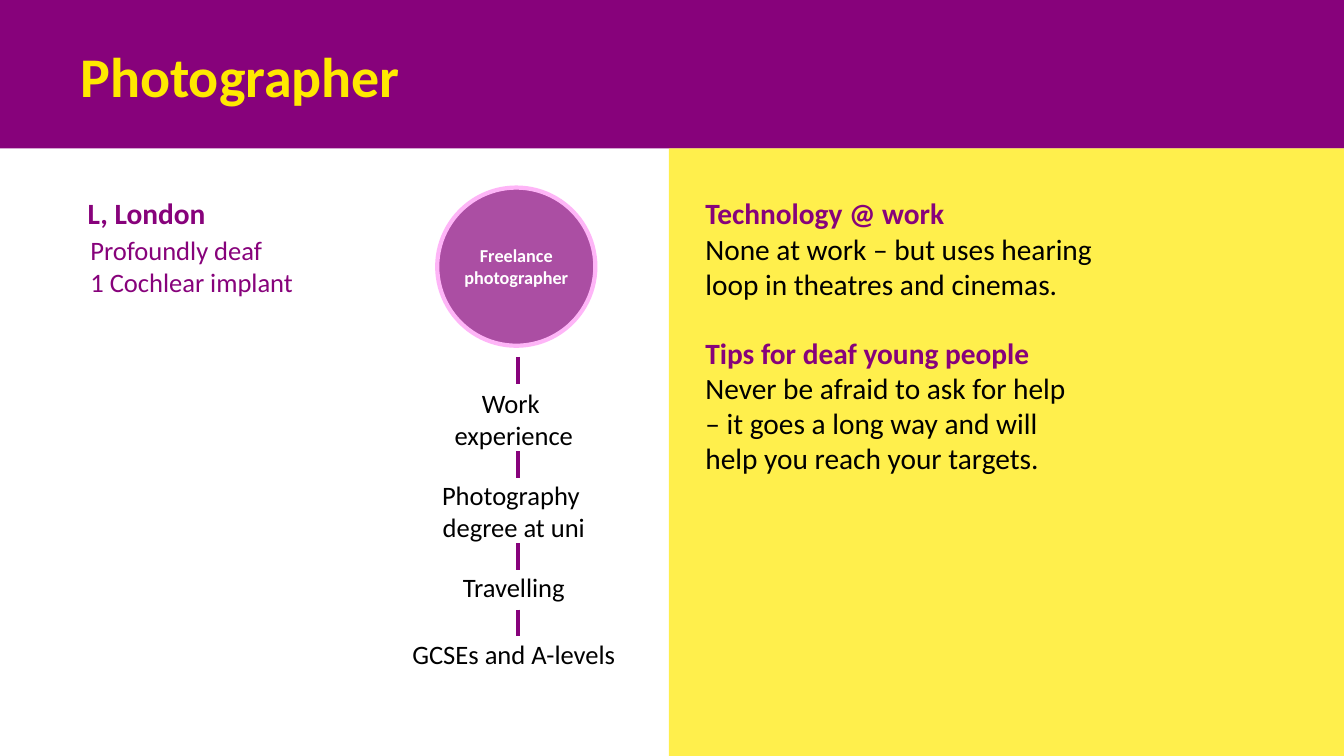
import pptx
import pptx.dml.color
import pptx.enum.shapes
import pptx.enum.text
import pptx.oxml.ns
import pptx.util
from lxml import etree

Pt = pptx.util.Pt
RGBColor = pptx.dml.color.RGBColor
MSO_SHAPE = pptx.enum.shapes.MSO_SHAPE
PP_ALIGN = pptx.enum.text.PP_ALIGN
MSO_ANCHOR = pptx.enum.text.MSO_ANCHOR
qn = pptx.oxml.ns.qn

PURPLE = RGBColor(0x87, 0x02, 0x7B)
YELLOW = RGBColor(0xFF, 0xE9, 0x00)
MAUVE = RGBColor(0xAB, 0x4E, 0xA3)
PINK = RGBColor(0xFE, 0xB5, 0xF7)
WHITE = RGBColor(0xFF, 0xFF, 0xFF)
BLACK = RGBColor(0, 0, 0)

TITLE = "Photographer"
PERSON = "L, London"
HEARING = "Profoundly deaf\n1 Cochlear implant"
JOB = "Freelance photographer"
ADVICE = [
    ("Technology @ work",
     "None at work – but uses hearing \vloop in theatres and cinemas.", 136, 84),
    ("Tips for deaf young people",
     "Never be afraid to ask for help \v– it goes a long way and will \vhelp you reach your targets.",
     235.5, 109),
]
CAREER_STEPS = [
    ("Work \vexperience", 273, 53),
    ("Photography \vdegree at uni", 338.5, 53),
    ("Travelling", 404.6, 30),
    ("GCSEs and A-levels", 452, 30),
]
LINK_TOPS = [255, 322.5, 388, 435.5]

WIDTH, HEIGHT = 960.5, 540
BANNER_H, PANEL_X = 106, 478
STEP_CENTER, STEP_W = 367.2, 200
LINK_X, LINK_LEN = 370, 19

prs = pptx.Presentation()
prs.slide_width, prs.slide_height = Pt(WIDTH), Pt(HEIGHT)
s = prs.slides.add_slide(prs.slide_layouts[6])


def add_shape(kind, x, y, w, h, fill, line=None):
    sp = s.shapes.add_shape(kind, Pt(x), Pt(y), Pt(w), Pt(h))
    sp.shadow.inherit = False
    sp.fill.solid()
    sp.fill.fore_color.rgb = fill
    if line is None:
        sp.line.fill.background()
    else:
        sp.line.color.rgb = line
        sp.line.width = Pt(3)
    return sp


def write(sp, text, size=19, color=BLACK, bold=False, heading=None,
          align=PP_ALIGN.LEFT, anchor=MSO_ANCHOR.TOP, inset=(7.2, 3.6)):
    tf = sp.text_frame
    tf.word_wrap = True
    tf.vertical_anchor = anchor
    tf.margin_left = tf.margin_right = Pt(inset[0])
    tf.margin_top = tf.margin_bottom = Pt(inset[1])
    paragraphs = [(line, color, bold) for line in text.split("\n")]
    if heading:
        paragraphs.insert(0, (heading, PURPLE, True))
    for i, (line, rgb, strong) in enumerate(paragraphs):
        p = tf.paragraphs[0] if i == 0 else tf.add_paragraph()
        p.text = line
        p.alignment = align
        for r in p.runs:
            r.font.name = "Calibri"
            r.font.size = Pt(size)
            r.font.bold = strong
            r.font.color.rgb = rgb


def add_box(x, y, w, h):
    return s.shapes.add_textbox(Pt(x), Pt(y), Pt(w), Pt(h))


add_shape(MSO_SHAPE.RECTANGLE, 0, 0, WIDTH, BANNER_H, PURPLE)
panel = add_shape(MSO_SHAPE.RECTANGLE, PANEL_X, BANNER_H,
                  WIDTH - PANEL_X, HEIGHT - BANNER_H, YELLOW)
panel_color = panel.fill._xPr.find(".//" + qn("a:srgbClr"))
etree.SubElement(panel_color, qn("a:alpha")).set("val", "70000")

write(add_box(48, 25, 650, 57), TITLE, size=40, color=YELLOW, bold=True,
      anchor=MSO_ANCHOR.MIDDLE, inset=(9.4, 5))
for heading, body, y, h in ADVICE:
    write(add_box(497, y, 409, h), body, size=21, heading=heading)
write(add_box(57.5, 163.5, 195, 53), HEARING, color=PURPLE)
write(add_box(55.5, 136, 305, 32), PERSON, size=21, color=PURPLE, bold=True)

for y in LINK_TOPS:
    link = s.shapes.add_connector(pptx.enum.shapes.MSO_CONNECTOR.STRAIGHT,
                                  Pt(LINK_X), Pt(y), Pt(LINK_X), Pt(y + LINK_LEN))
    link.line.color.rgb = PURPLE
    link.line.width = Pt(3)
    etree.SubElement(link._element.spPr, qn("a:effectLst"))

for step, y, h in CAREER_STEPS:
    write(add_box(STEP_CENTER - STEP_W / 2, y, STEP_W, h), step, align=PP_ALIGN.CENTER)

job = add_shape(MSO_SHAPE.OVAL, 312.5, 134, 113, 113, MAUVE, line=PINK)
write(job, JOB, size=13, color=WHITE, bold=True, align=PP_ALIGN.CENTER,
      anchor=MSO_ANCHOR.MIDDLE, inset=(0, 0))

prs.save("out.pptx")
